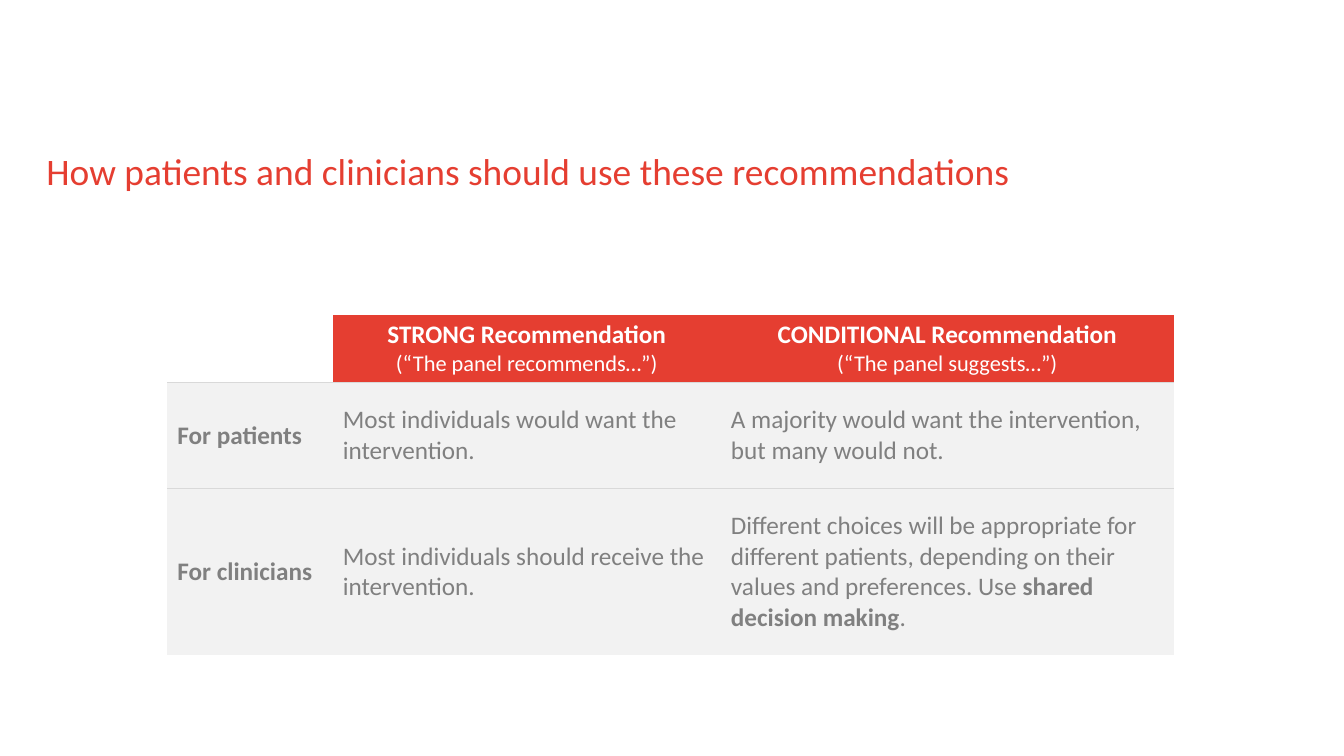
from dataclasses import dataclass

from lxml.etree import SubElement
from pptx import Presentation
from pptx.dml.color import RGBColor
from pptx.enum.text import MSO_ANCHOR as Anchor, MSO_AUTO_SIZE as AutoSize, PP_ALIGN as Align
from pptx.oxml.ns import qn
from pptx.table import _Cell as Cell
from pptx.text.text import Font
from pptx.util import Inches, Pt

RED, WHITE, GREY, PALE, RULE = "E53E31", "FFFFFF", "808080", "F2F2F2", "D9D9D9"


@dataclass(frozen=True)
class Line:
    text: str
    size: float = 18
    color: str = GREY
    bold: bool = False
    align: Align = Align.LEFT
    strong: str = ""
    ending: str = ""


@dataclass(frozen=True)
class Entry:
    lines: tuple[Line, ...] = ()
    fill: str = PALE


def rgb(color: str) -> RGBColor:
    return RGBColor.from_string(color)


def style(font: Font, size: float, color: str) -> None:
    font.name = "Calibri"
    font.size = Pt(size)
    font.color.rgb = rgb(color)


def header(heading: str, phrase: str) -> Entry:
    return Entry((Line(heading, 18, WHITE, True, Align.CENTER),
                  Line(phrase, 16, WHITE, False, Align.CENTER)), RED)


def label(text: str) -> Entry:
    return Entry((Line(text, bold=True),))


def advice(text: str, strong: str = "", ending: str = "") -> Entry:
    return Entry((Line(text, strong=strong, ending=ending),))


def draw_borders(cell: Cell, ruled: str) -> None:
    properties = cell._tc.get_or_add_tcPr()
    for side in "LRTB":
        border = SubElement(properties, qn(f"a:ln{side}"), w=str(Pt(1)))
        if side in ruled:
            solid = SubElement(border, qn("a:solidFill"))
            SubElement(solid, qn("a:srgbClr"), val=RULE)
        else:
            SubElement(border, qn("a:noFill"))


def draw_entry(cell: Cell, entry: Entry, ruled: str) -> None:
    draw_borders(cell, ruled)
    cell.vertical_anchor = Anchor.MIDDLE
    if entry.fill:
        cell.fill.solid()
        cell.fill.fore_color.rgb = rgb(entry.fill)
    else:
        cell.fill.background()
    frame = cell.text_frame
    for index, line in enumerate(entry.lines):
        paragraph = frame.add_paragraph() if index else frame.paragraphs[0]
        paragraph.alignment = line.align
        style(paragraph.font, line.size, line.color)
        paragraph.font.bold = line.bold
        paragraph.add_run().text = line.text
        if line.strong:
            emphasis = paragraph.add_run()
            emphasis.text = line.strong
            emphasis.font.bold = True
            paragraph.add_run().text = line.ending


COLUMNS = (1.64, 3.85, 4.49)
ROWS = (0.67, 1.05, 1.65)
RULED_SIDES = ("B", "TB", "T")
GUIDANCE = (
    (Entry(fill=""),
     header("STRONG Recommendation", "(“The panel recommends…”)"),
     header("CONDITIONAL Recommendation", "(“The panel suggests…”)")),
    (label("For patients"),
     advice("Most individuals would want the intervention."),
     advice("A majority would want the intervention, but many would not.")),
    (label("For clinicians"),
     advice("Most individuals should receive the intervention."),
     advice("Different choices will be appropriate for different patients, depending on "
            "their values and preferences. Use ", "shared decision making", ".")),
)


def main() -> None:
    deck = Presentation()
    deck.slide_width, deck.slide_height = Inches(13.33), Inches(7.5)
    slide = deck.slides.add_slide(deck.slide_layouts[5])

    title = slide.shapes.title
    title.left, title.top = Inches(0.46), Inches(1.47)
    title.width, title.height = Inches(12), Inches(0.78)
    frame = title.text_frame
    frame.text = "How patients and clinicians should use these recommendations"
    frame.margin_left = frame.margin_right = frame.margin_top = frame.margin_bottom = 0
    frame.vertical_anchor = Anchor.TOP
    frame.auto_size = AutoSize.NONE
    frame.word_wrap = True
    frame.paragraphs[0].alignment = Align.LEFT
    style(frame.paragraphs[0].font, 26.7, RED)

    guidance = slide.shapes.add_table(
        len(ROWS), len(COLUMNS), Inches(1.66), Inches(3.12),
        Inches(sum(COLUMNS)), Inches(sum(ROWS))).table
    guidance.first_row = guidance.horz_banding = False
    for column, width in zip(guidance.columns, COLUMNS):
        column.width = Inches(width)
    for row, height, entries, ruled in zip(guidance.rows, ROWS, GUIDANCE, RULED_SIDES):
        row.height = Inches(height)
        for cell, entry in zip(row.cells, entries):
            draw_entry(cell, entry, ruled)

    deck.save("out.pptx")


if __name__ == "__main__":
    main()
